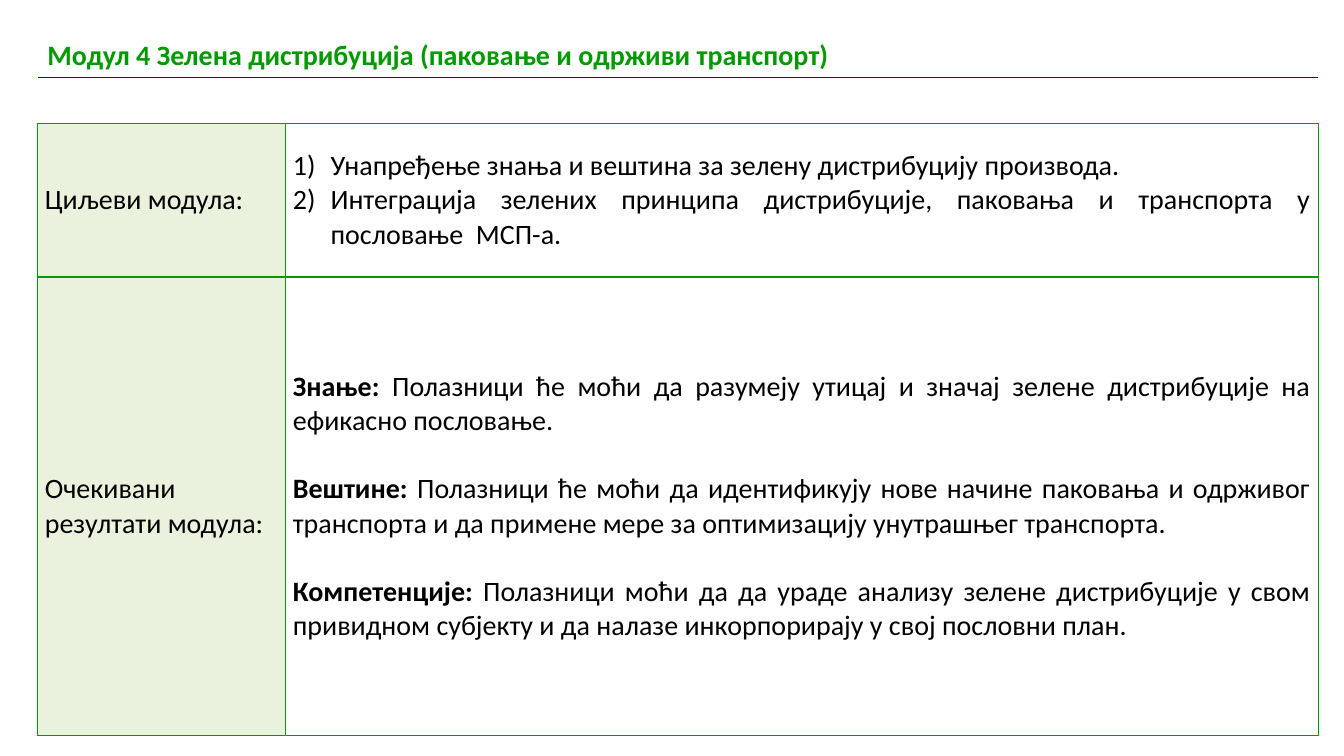
from lxml import etree
from pptx import Presentation
from pptx import util as u
from pptx.dml.color import RGBColor
from pptx.enum import text
from pptx.oxml.ns import qn

GREEN, NAVY, WHITE, BLACK, PALE_GREEN = "009900", "002060", "FFFFFF", "000000", "EAF1DD"
LEFT, WIDTH = u.Cm(0.94), u.Cm(32.28)


def style_cell(cell, borders, fill):
    """Draw 1 pt borders, given as colours for left, right, top and bottom, and fill the cell."""
    properties = cell._tc.get_or_add_tcPr()
    for side, colour in zip("LRTB", borders):
        line = etree.SubElement(properties, qn(f"a:ln{side}"), w=str(u.Pt(1)))
        solid = etree.SubElement(line, qn("a:solidFill"))
        etree.SubElement(solid, qn("a:srgbClr"), val=colour)
    if fill:
        cell.fill.solid()
        cell.fill.fore_color.rgb = RGBColor.from_string(fill)
    else:
        cell.fill.background()


def add_plain_table(slide, top, column_widths, row_heights):
    """Add a table without header or band styling, sized in centimetres."""
    shape = slide.shapes.add_table(len(row_heights), len(column_widths), LEFT, top,
                                   WIDTH, u.Cm(sum(row_heights)))
    table = shape.table
    table.first_row = table.horz_banding = False
    for column, width in zip(table.columns, column_widths):
        column.width = u.Cm(width)
    for row, height in zip(table.rows, row_heights):
        row.height = u.Cm(height)
    return table


presentation = Presentation()
presentation.slide_width = u.Cm(33.87)
presentation.slide_height = u.Cm(19.05)
slide = presentation.slides.add_slide(presentation.slide_layouts[6])

# Heading with a rule below
heading = add_plain_table(slide, u.Cm(0.84), [32.28], [1.09]).cell(0, 0)
style_cell(heading, [WHITE, WHITE, WHITE, NAVY], None)
heading.text = "Модул 4 Зелена дистрибуција (паковање и одрживи транспорт)"
heading_font = heading.text_frame.paragraphs[0].font
heading_font.name, heading_font.size, heading_font.bold = "Calibri", u.Pt(20), True
heading_font.color.rgb = RGBColor.from_string(GREEN)

# Module goals and expected results; each paragraph is a bold lead and plain text
goals = [
    ("", "Унапређење знања и вештина за зелену дистрибуцију производа."),
    ("", "Интеграција зелених принципа дистрибуције, паковања и транспорта у "
         "пословање  МСП-а."),
]
results = [
    ("Знање:", " Полазници ће моћи да разумеју утицај и значај зелене дистрибуције на "
               "ефикасно пословање."),
    ("Вештине:", " Полазници ће моћи да идентификују нове начине паковања и одрживог "
                 "транспорта и да примене мере за оптимизацију унутрашњег транспорта."),
    ("Компетенције:", " Полазници моћи да да ураде анализу зелене дистрибуције у свом "
                      "привидном субјекту и да налазе инкорпорирају у свој пословни план."),
]
rows = [
    [[("", "Циљеви модула:")], goals],
    [[("", "Очекивани резултати модула:")], results],
]

module_table = add_plain_table(slide, u.Cm(3.12), [6.25, 26.03], [3.86, 11.56])
for row_index, row in enumerate(rows):
    for column_index, content in enumerate(row):
        cell = module_table.cell(row_index, column_index)
        style_cell(cell, [GREEN] * 4, PALE_GREEN if column_index == 0 else None)
        cell.vertical_anchor = text.MSO_ANCHOR.MIDDLE
        cell.margin_left = cell.margin_right = u.Cm(0.19)
        cell.margin_top = cell.margin_bottom = 0
        frame = cell.text_frame
        for index, (lead, body) in enumerate(content):
            paragraph = frame.add_paragraph() if index else frame.paragraphs[0]
            paragraph.alignment = text.PP_ALIGN.JUSTIFY
            paragraph.font.name, paragraph.font.size = "Calibri", u.Pt(20)
            paragraph.font.color.rgb = RGBColor.from_string(BLACK)
            if lead:
                lead_run = paragraph.add_run()
                lead_run.text = lead
                lead_run.font.bold = True
            paragraph.add_run().text = body
            if content is results and index:
                paragraph.space_before = u.Pt(24.4)
            if content is goals:
                settings = paragraph._p.get_or_add_pPr()
                settings.set("marL", str(u.Cm(0.95)))
                settings.set("indent", str(-u.Cm(0.95)))
                numbering = etree.Element(qn("a:buAutoNum"), type="arabicParenR")
                settings.insert(0, numbering)

presentation.save("out.pptx")
